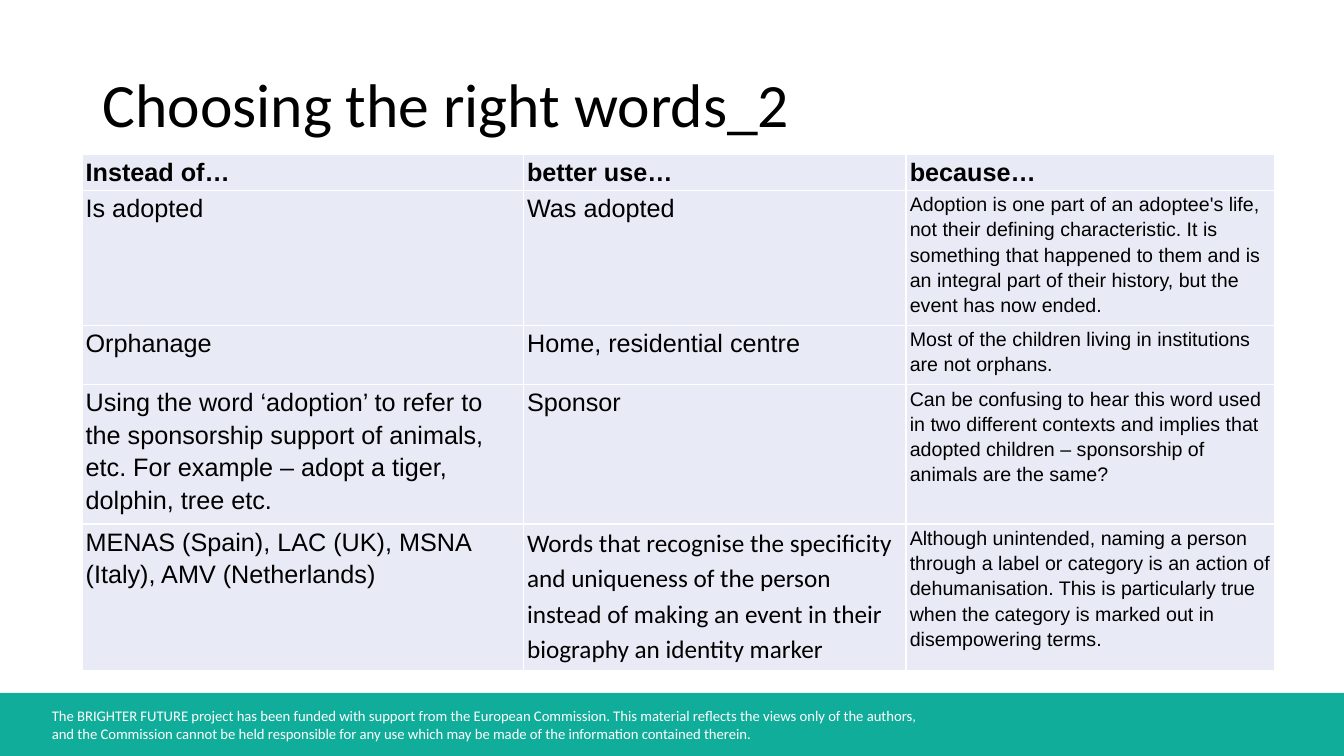
from pptx import Presentation
from pptx.dml.color import RGBColor
from pptx.enum.shapes import MSO_SHAPE
from pptx.enum.text import MSO_ANCHOR, PP_ALIGN
from pptx.oxml import parse_xml
from pptx.oxml.ns import nsdecls
from pptx.util import Pt

RECTANGLE = MSO_SHAPE.RECTANGLE
MIDDLE, TOP = MSO_ANCHOR.MIDDLE, MSO_ANCHOR.TOP
LEFT = PP_ALIGN.LEFT

TEAL = RGBColor(0x10, 0xAD, 0x9A)
LAVENDER = RGBColor(0xE8, 0xEB, 0xF5)
WHITE = RGBColor(0xFF, 0xFF, 0xFF)
BLACK = RGBColor(0, 0, 0)

SLIDE_WIDTH, SLIDE_HEIGHT = 960, 540
COLUMN_WIDTHS = [315.3, 273.4, 263.1]
ROW_HEIGHTS = [25.7, 83.5, 42.5, 83.5, 104.4]

HEADINGS = ["Instead of…", "better use…", "because…"]
WORD_CHOICES = [
    ["Is adopted", "Was adopted",
     "Adoption is one part of an adoptee's life, not their defining characteristic. "
     "It is something that happened to them and is an integral part of their history, "
     "but the event has now ended."],
    ["Orphanage", "Home, residential centre",
     "Most of the children living in institutions are not orphans."],
    ["Using the word ‘adoption’ to refer to the sponsorship support of animals, etc. "
     "For example – adopt a tiger, dolphin, tree etc.", "Sponsor",
     "Can be confusing to hear this word used in two different contexts and implies "
     "that adopted children – sponsorship of animals are the same?"],
    ["MENAS (Spain), LAC (UK), MSNA (Italy), AMV (Netherlands)",
     "Words that recognise the specificity and uniqueness of the person instead of "
     "making an event in their biography an identity marker",
     "Although unintended, naming a person through a label or category is an action of "
     "dehumanisation. This is particularly true when the category is marked out in "
     "disempowering terms."],
]
FUNDING_NOTE = [
    "The BRIGHTER FUTURE project has been funded with support from the European "
    "Commission. This material reflects the views only of the authors, ",
    "and the Commission cannot be held responsible for any use which may be made of "
    "the information contained therein.",
]


def add_run(paragraph, text, size, font, color, bold=False):
    run = paragraph.add_run()
    run.text = text
    run.font.size = Pt(size)
    run.font.name = font
    run.font.color.rgb = color
    run.font.bold = bold


def add_footer(slide, left, top, width, height):
    band = slide.shapes.add_shape(RECTANGLE, Pt(left), Pt(top), Pt(width), Pt(height))
    band.shadow.inherit = False
    band.fill.solid()
    band.fill.fore_color.rgb = TEAL
    band.line.fill.background()

    note = slide.shapes.add_textbox(Pt(left + 30), Pt(top + 6.4), Pt(720), Pt(32.4))
    note.text_frame.word_wrap = True
    paragraph = note.text_frame.paragraphs[0]
    for index, line in enumerate(FUNDING_NOTE):
        if index:
            paragraph.add_line_break()
        add_run(paragraph, line, 10.5, "Calibri", WHITE)


def add_title(slide, left, top, width, height):
    title = slide.shapes.title
    title.left, title.top = Pt(left), Pt(top)
    title.width, title.height = Pt(width), Pt(height)
    frame = title.text_frame
    frame.word_wrap = True
    frame.vertical_anchor = MIDDLE
    paragraph = frame.paragraphs[0]
    paragraph.alignment = LEFT
    paragraph.line_spacing = 0.9
    add_run(paragraph, "Choosing the right words_2", 44, "Calibri", BLACK)


def style_cell(cell):
    """Give the cell white borders, a lavender fill and narrow margins."""
    properties = cell._tc.get_or_add_tcPr()
    for side in ("lnL", "lnR", "lnT", "lnB"):
        properties.append(parse_xml(
            f'<a:{side} {nsdecls("a")} w="{Pt(1)}"><a:solidFill>'
            f'<a:srgbClr val="{WHITE}"/></a:solidFill></a:{side}>'))
    cell.fill.solid()
    cell.fill.fore_color.rgb = LAVENDER
    cell.margin_left = cell.margin_right = Pt(2.7)
    cell.margin_top = cell.margin_bottom = 0
    cell.vertical_anchor = TOP


def add_word_table(slide, left, top):
    rows = [HEADINGS] + WORD_CHOICES
    table = slide.shapes.add_table(
        len(rows), len(HEADINGS), Pt(left), Pt(top),
        Pt(sum(COLUMN_WIDTHS)), Pt(sum(ROW_HEIGHTS))).table
    table.first_row = table.horz_banding = False
    for column, width in zip(table.columns, COLUMN_WIDTHS):
        column.width = Pt(width)
    for row, height in zip(table.rows, ROW_HEIGHTS):
        row.height = Pt(height)

    last_row, better_use, because = len(rows) - 1, 1, 2
    for r, texts in enumerate(rows):
        for c, text in enumerate(texts):
            cell = table.cell(r, c)
            style_cell(cell)
            paragraph = cell.text_frame.paragraphs[0]
            paragraph.line_spacing = 1.15
            size = 14 if r > 0 and c == because else 18
            font = "Calibri" if (r, c) == (last_row, better_use) else "Arial"
            add_run(paragraph, text, size, font, BLACK, bold=r == 0)


def main():
    presentation = Presentation()
    presentation.slide_width = Pt(SLIDE_WIDTH)
    presentation.slide_height = Pt(SLIDE_HEIGHT)
    title_only = presentation.slide_layouts[5]
    slide = presentation.slides.add_slide(title_only)
    add_footer(slide, 0, 495, SLIDE_WIDTH, 45)
    add_title(slide, 66, 24.5, 828, 104.4)
    add_word_table(slide, 58.5, 110.2)
    presentation.save("out.pptx")


if __name__ == "__main__":
    main()
